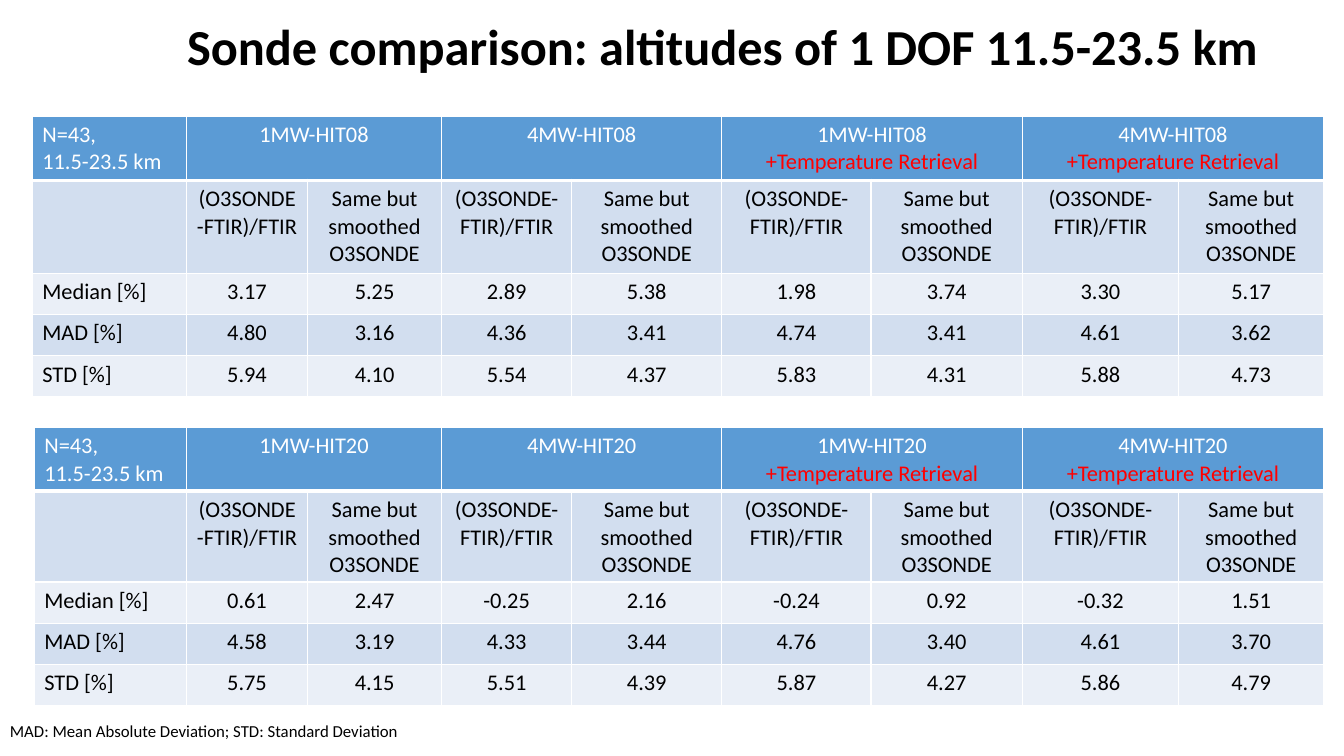
from lxml.etree import SubElement
from pptx import Presentation
from pptx.dml.color import RGBColor
from pptx.enum.text import MSO_ANCHOR, MSO_AUTO_SIZE, PP_ALIGN
from pptx.oxml.ns import qn
from pptx.util import Inches, Pt

FONT = "Calibri"
COLORS = {
    "header": "5B9BD5",
    "dark_band": "D2DEEF",
    "light_band": "EAEFF7",
    "border": "FFFFFF",
    "header_text": "FFFFFF",
    "highlight": "FF0000",
    "text": "000000",
}
SAMPLE = "N=43,\n11.5-23.5 km"
RETRIEVAL = "+Temperature Retrieval"
WINDOWS = ["1MW", "4MW"]
MEASURES = ["(O3SONDE-FTIR)/FTIR", "Same but smoothed O3SONDE"]
VALUE_WIDTHS = [1.2, 1.33, 1.29, 1.49, 1.48, 1.5, 1.55, 1.44]
VALUE_ROW_HEIGHT = 0.41
HIT08 = {
    "Median [%]": ["3.17", "5.25", "2.89", "5.38", "1.98", "3.74", "3.30", "5.17"],
    "MAD [%]": ["4.80", "3.16", "4.36", "3.41", "4.74", "3.41", "4.61", "3.62"],
    "STD [%]": ["5.94", "4.10", "5.54", "4.37", "5.83", "4.31", "5.88", "4.73"],
}
HIT20 = {
    "Median [%]": ["0.61", "2.47", "-0.25", "2.16", "-0.24", "0.92", "-0.32", "1.51"],
    "MAD [%]": ["4.58", "3.19", "4.33", "3.44", "4.76", "3.40", "4.61", "3.70"],
    "STD [%]": ["5.75", "4.15", "5.51", "4.39", "5.87", "4.27", "5.86", "4.79"],
}


def rgb(name):
    """Return the named colour."""
    return RGBColor.from_string(COLORS[name])


def style_font(font, size, color="text", bold=False):
    """Apply the slide's typeface with a size, colour and weight."""
    font.name = FONT
    font.size = Pt(size)
    font.bold = bold
    font.color.rgb = rgb(color)


def add_borders(cell, bottom_width):
    """Draw white lines round a cell."""
    properties = cell._tc.get_or_add_tcPr()
    for side, width in (("L", 1), ("R", 1), ("T", 1), ("B", bottom_width)):
        line = SubElement(properties, qn(f"a:ln{side}"), w=str(Pt(width)))
        fill = SubElement(line, qn("a:solidFill"))
        SubElement(fill, qn("a:srgbClr"), val=COLORS["border"])


def format_cell(cell, row, column):
    """Set a cell's borders, fill, font and alignment by its place."""
    is_header = row == 0
    add_borders(cell, 3 if is_header else 1)
    band = "header" if is_header else ("dark_band" if row % 2 else "light_band")
    cell.fill.solid()
    cell.fill.fore_color.rgb = rgb(band)
    for paragraph in cell.text_frame.paragraphs:
        style_font(paragraph.font, 16, "header_text" if is_header else "text")
        paragraph.alignment = PP_ALIGN.CENTER if column else PP_ALIGN.LEFT


def fill_group_headers(table, database):
    """Merge header pairs and name each retrieval setup."""
    for group in range(4):
        column = 1 + 2 * group
        heading = table.cell(0, column)
        heading.merge(table.cell(0, column + 1))
        paragraph = heading.text_frame.paragraphs[0]
        paragraph.add_run().text = f"{WINDOWS[group % 2]}-{database}"
        if group >= 2:
            paragraph.add_line_break()
            retrieval = paragraph.add_run()
            retrieval.text = RETRIEVAL
            retrieval.font.color.rgb = rgb("highlight")


def add_comparison(slide, left, top, label_width, head_heights, database, statistics):
    """Add the comparison table for one spectroscopic database."""
    widths = [label_width] + VALUE_WIDTHS
    heights = head_heights + [VALUE_ROW_HEIGHT] * len(statistics)
    table = slide.shapes.add_table(
        len(heights), len(widths), Inches(left), Inches(top),
        Inches(sum(widths)), Inches(sum(heights)),
    ).table
    for column, width in zip(table.columns, widths):
        column.width = Inches(width)
    for row, height in zip(table.rows, heights):
        row.height = Inches(height)

    table.cell(0, 0).text = SAMPLE
    fill_group_headers(table, database)
    body = [[""] + MEASURES * 4]
    body += [[label] + values for label, values in statistics.items()]
    for row, texts in enumerate(body, start=1):
        for column, text in enumerate(texts):
            table.cell(row, column).text = text
    for row in range(len(heights)):
        for column in range(len(widths)):
            format_cell(table.cell(row, column), row, column)


def add_title(slide):
    """Place the right-aligned title."""
    title = slide.shapes.title
    title.left, title.top = Inches(1.65), Inches(0.1)
    title.width, title.height = Inches(11.05), Inches(0.71)
    frame = title.text_frame
    frame.text = "Sonde comparison: altitudes of 1 DOF 11.5-23.5 km "
    frame.vertical_anchor = MSO_ANCHOR.TOP
    frame.auto_size = MSO_AUTO_SIZE.SHAPE_TO_FIT_TEXT
    paragraph = frame.paragraphs[0]
    paragraph.alignment = PP_ALIGN.RIGHT
    style_font(paragraph.font, 36, bold=True)


def add_abbreviations(slide):
    """Explain the abbreviations below the tables."""
    note = slide.shapes.add_textbox(Inches(0), Inches(7.1), Inches(4.09), Inches(0.3))
    frame = note.text_frame
    frame.word_wrap = False
    frame.auto_size = MSO_AUTO_SIZE.SHAPE_TO_FIT_TEXT
    frame.text = "MAD: Mean Absolute Deviation; STD: Standard Deviation"
    style_font(frame.paragraphs[0].font, 12)


def main():
    """Build and save the slide."""
    presentation = Presentation()
    presentation.slide_width = Inches(13.33)
    presentation.slide_height = Inches(7.5)
    slide = presentation.slides.add_slide(presentation.slide_layouts[5])
    add_title(slide)
    add_comparison(slide, 0.32, 1.15, 1.53, [0.64, 0.92], "HIT08", HIT08)
    add_comparison(slide, 0.34, 4.24, 1.51, [0.63, 0.9], "HIT20", HIT20)
    add_abbreviations(slide)
    presentation.save("out.pptx")


if __name__ == "__main__":
    main()
